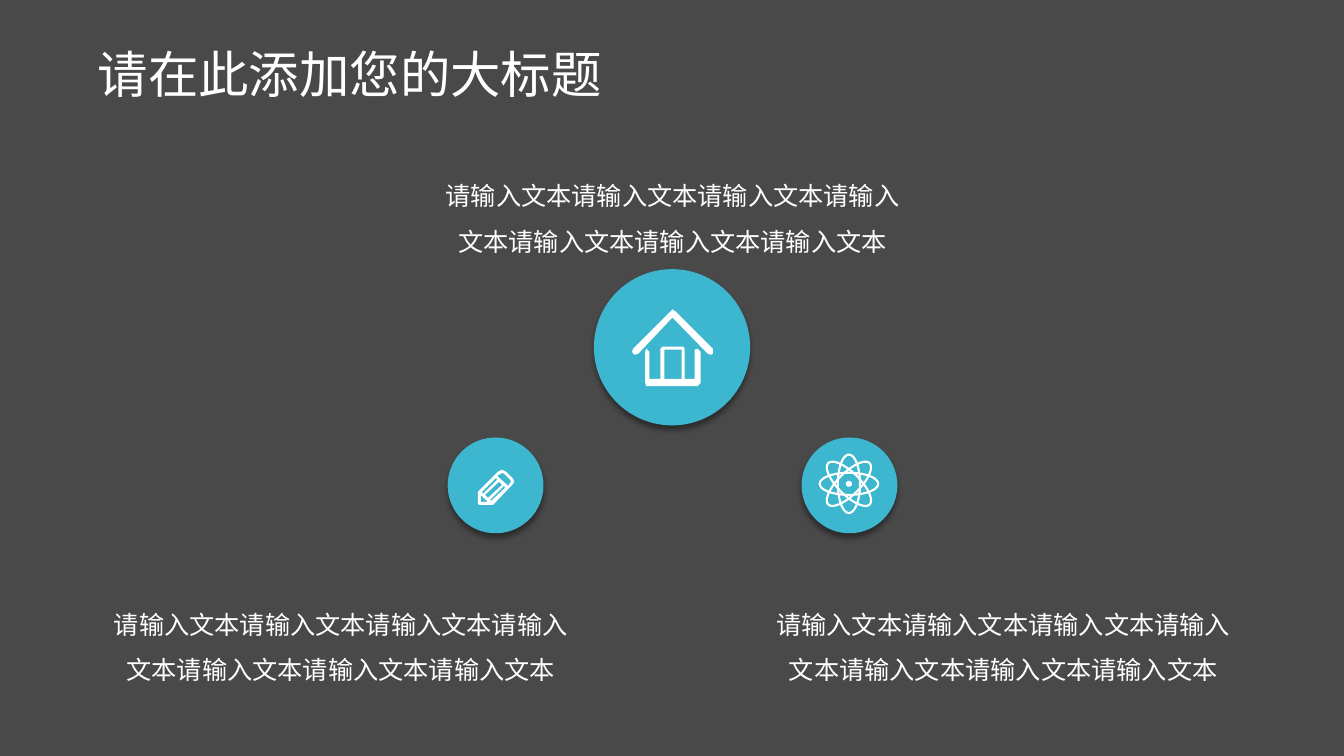
import math
from dataclasses import dataclass

import pptx
import pptx.dml.color
import pptx.enum.shapes
import pptx.enum.text
import pptx.oxml
import pptx.oxml.ns
import pptx.util
from lxml import etree

Inches = pptx.util.Inches
OVAL = pptx.enum.shapes.MSO_SHAPE.OVAL
ALIGN = pptx.enum.text.PP_ALIGN


@dataclass(frozen=True)
class Theme:
    background: str = "494949"
    accent: str = "3DB7CF"
    light: str = "FFFFFF"
    font: str = "Noto Sans CJK SC"
    title_size: int = 36
    caption_size: int = 18
    orbit_width: float = 1.5


@dataclass(frozen=True)
class Box:
    left: float
    top: float
    width: float
    height: float

    def emu(self):
        return [Inches(v) for v in (self.left, self.top, self.width, self.height)]


THEME = Theme()
TITLE = "请在此添加您的大标题"
CAPTION = "请输入文本" * 7

HOUSE = [
    [(.62, .42), (.62, .4), (.65, .39), (.68, .42), (.68, .73), (.65, .76),
     (.14, .76), (.13, .73), (.13, .42), (.14, .39), (.17, .42), (.17, .69),
     (.28, .69), (.28, .39), (.3, .37), (.51, .37), (.52, .39), (.52, .69),
     (.62, .69)],
    [(.32, .69), (.49, .69), (.49, .4), (.32, .4)],
    [(.06, .44), (.03, .45), (.01, .44), (0, .42), (.01, .39), (.38, .02),
     (.4, 0), (.43, .02), (.8, .39), (.8, .44), (.78, .45), (.75, .44),
     (.4, .08)],
]
PENCIL = [
    [(.36, .12), (.35, .09), (.28, .02), (.24, 0), (.2, .02), (.01, .21),
     (0, .22), (0, .34), (.02, .35), (.13, .35), (.15, .35), (.34, .15)],
    [(.18, .08), (.19, .1), (.05, .24), (.04, .22)],
    [(.03, .32), (.03, .25), (.1, .32)],
    [(.07, .25), (.21, .12), (.24, .15), (.1, .28)],
    [(.13, .31), (.12, .3), (.26, .16), (.27, .18)],
    [(.33, .12), (.32, .13), (.3, .16), (.19, .06), (.23, .04), (.24, .03),
     (.26, .04), (.32, .1)],
]


def rgb(value):
    return pptx.dml.color.RGBColor.from_string(value)


def paint(shape, fill=None, line=None):
    shape.shadow.inherit = False
    if fill:
        shape.fill.solid()
        shape.fill.fore_color.rgb = rgb(fill)
    else:
        shape.fill.background()
    if line:
        shape.line.color.rgb = rgb(line)
        shape.line.width = pptx.util.Pt(THEME.orbit_width)
    else:
        shape.line.fill.background()


def add_text(slide, box, text, size, formats):
    shape = slide.shapes.add_textbox(*box.emu())
    frame = shape.text_frame
    frame.word_wrap = True
    frame.vertical_anchor = pptx.enum.text.MSO_ANCHOR.MIDDLE
    para = frame.paragraphs[0]
    for name, value in formats.items():
        setattr(para, name, value)
    span = para.add_run()
    span.text = text
    for name, value in {"size": pptx.util.Pt(size), "name": THEME.font}.items():
        setattr(span.font, name, value)
    span.font.color.rgb = rgb(THEME.light)
    east_asian = etree.SubElement(span.font._element, pptx.oxml.ns.qn("a:ea"))
    east_asian.set("typeface", THEME.font)


def add_title(slide, box):
    add_text(slide, box, TITLE, THEME.title_size,
             {"alignment": ALIGN.LEFT, "line_spacing": 0.9})


def add_caption(slide, box):
    add_text(slide, box, CAPTION, THEME.caption_size,
             {"alignment": ALIGN.CENTER, "line_spacing": 1.5})


def add_outline(slide, left, top, contours):
    placed = [[(Inches(left + x), Inches(top + y)) for x, y in contour]
              for contour in contours]
    builder = slide.shapes.build_freeform(*placed[0][0], scale=1.0)
    for index, contour in enumerate(placed):
        if index:
            builder.move_to(*contour[0])
        builder.add_line_segments(contour[1:], close=True)
    return builder.convert_to_shape()


def add_badge(slide, box):
    disc = slide.shapes.add_shape(OVAL, *box.emu())
    paint(disc, THEME.accent)
    effects = disc._element.spPr.find(pptx.oxml.ns.qn("a:effectLst"))
    effects.append(pptx.oxml.parse_xml(
        f'<a:outerShdw {pptx.oxml.ns.nsdecls("a")} blurRad="50800" dist="38100" '
        'dir="5400000" algn="t" rotWithShape="0"><a:srgbClr val="000000">'
        '<a:alpha val="40000"/></a:srgbClr></a:outerShdw>'))


def add_house(slide, box):
    add_badge(slide, box)
    paint(add_outline(slide, box.left + .38, box.top + .4, HOUSE), THEME.light)


def add_pencil(slide, box):
    add_badge(slide, box)
    paint(add_outline(slide, box.left + .3, box.top + .32, PENCIL), THEME.light)


def orbit(tilt, long_radius=.29, short_radius=.11, steps=48):
    points = []
    for step in range(steps):
        angle = math.tau * step / steps
        x, y = long_radius * math.cos(angle), short_radius * math.sin(angle)
        points.append((x * math.cos(tilt) - y * math.sin(tilt),
                       x * math.sin(tilt) + y * math.cos(tilt)))
    return points


def add_atom(slide, box):
    add_badge(slide, box)
    x, y = box.left + .47, box.top + .46
    orbits = [orbit(quarter * math.pi / 4) for quarter in range(4)]
    paint(add_outline(slide, x, y, orbits), line=THEME.light)
    nucleus = Box(x - .03, y - .03, .06, .06)
    paint(slide.shapes.add_shape(OVAL, *nucleus.emu()), THEME.light)


def main():
    deck = pptx.Presentation()
    deck.slide_width, deck.slide_height = Inches(13.33), Inches(7.5)
    page = deck.slides.add_slide(deck.slide_layouts[6])
    page.background.fill.solid()
    page.background.fill.fore_color.rgb = rgb(THEME.background)

    add_title(page, Box(.87, .3, 10.94, .93))
    add_house(page, Box(5.89, 2.67, 1.55, 1.55))
    add_pencil(page, Box(4.44, 4.34, .95, .95))
    add_atom(page, Box(7.95, 4.34, .95, .95))
    for left, top in ((4.2, 1.5), (.91, 5.75), (7.48, 5.75)):
        add_caption(page, Box(left, top, 4.94, 1.18))
    deck.save("out.pptx")


if __name__ == "__main__":
    main()
